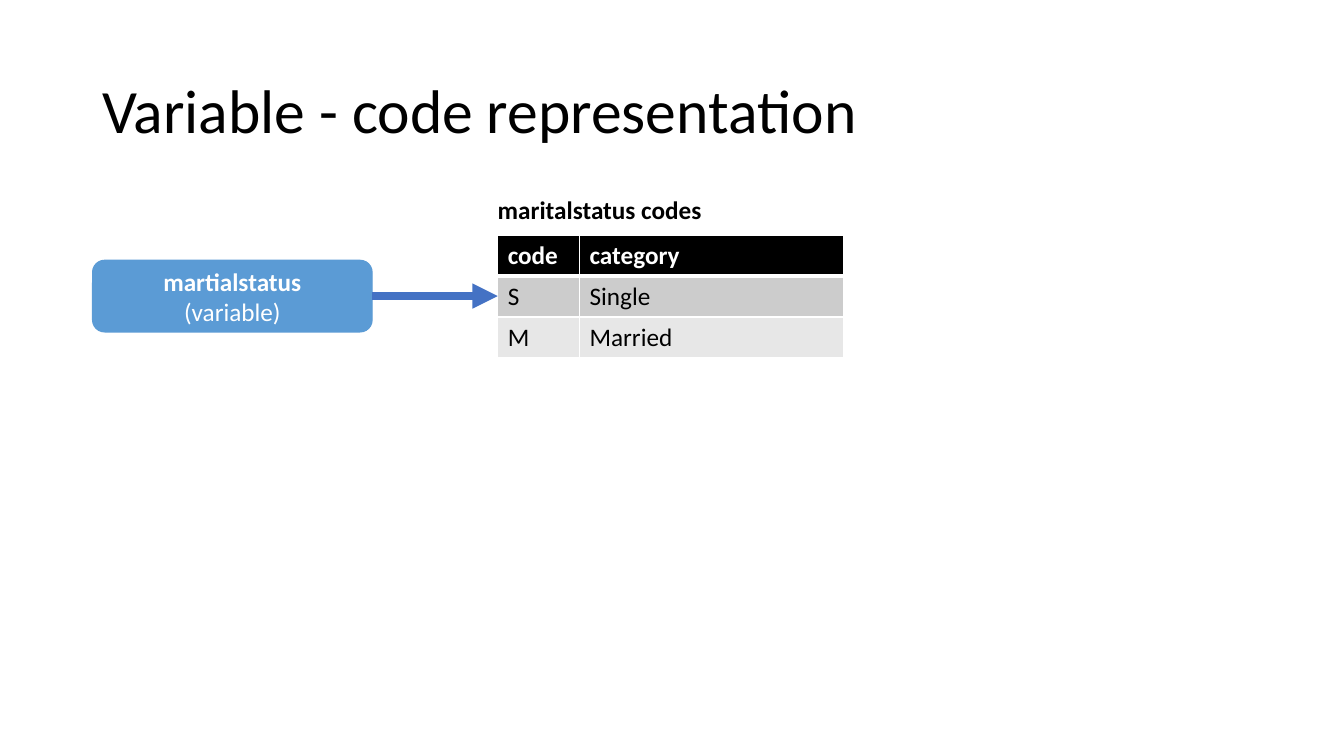
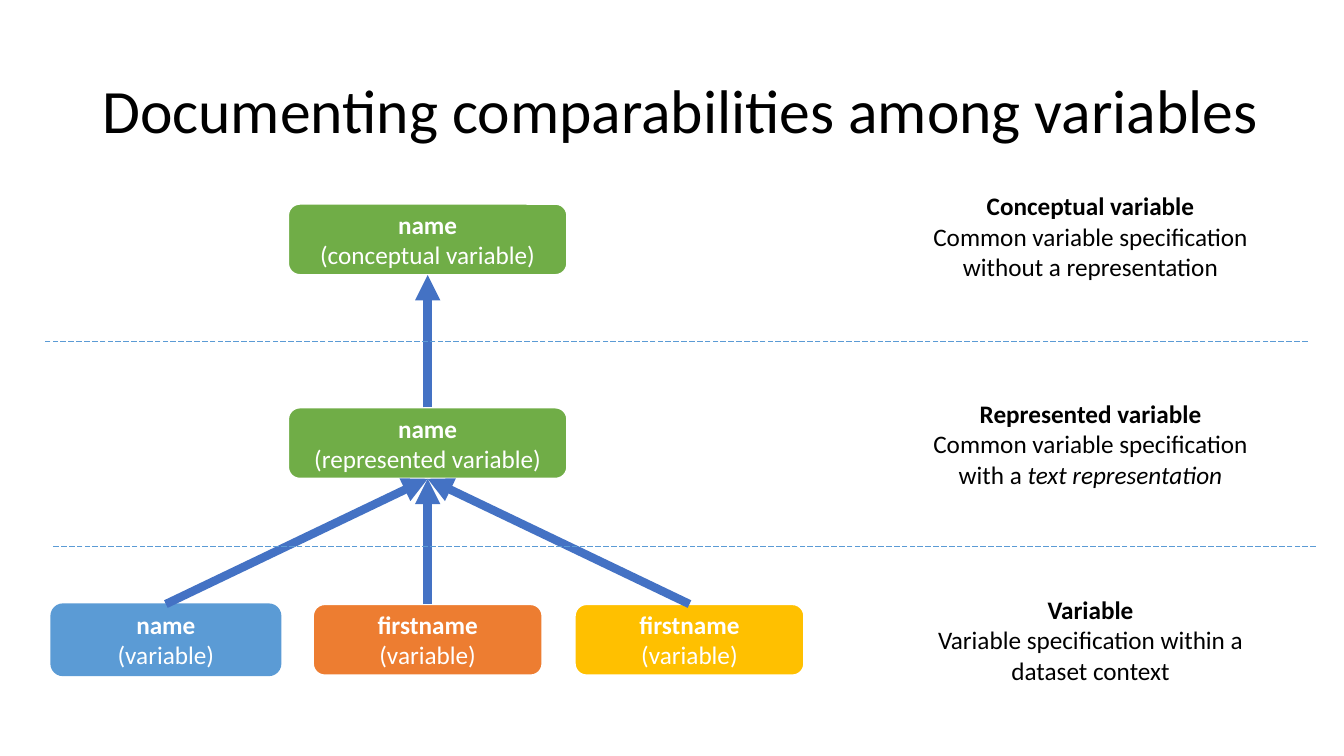
from dataclasses import dataclass

from lxml.etree import SubElement
from pptx import Presentation
from pptx.dml.color import RGBColor
from pptx.enum.dml import MSO_LINE_DASH_STYLE as Dash
from pptx.enum.shapes import MSO_CONNECTOR as Connector, MSO_SHAPE as Shape
from pptx.enum.text import MSO_ANCHOR as Anchor, PP_ALIGN as Align
from pptx.oxml.ns import qn
from pptx.util import Pt


@dataclass(frozen=True)
class Theme:
    font: str = "Calibri"
    title_size: float = 44
    body_size: float = 18
    black: str = "000000"
    white: str = "FFFFFF"
    blue: str = "5B9BD5"
    green: str = "70AD47"
    orange: str = "ED7D31"
    yellow: str = "FFC000"
    arrow: str = "4472C4"
    row_fills: tuple = ("000000", "CCCCCC", "E7E7E7")


THEME = Theme()


@dataclass(frozen=True)
class Span:
    text: str
    bold: bool = False
    italic: bool = False


@dataclass(frozen=True)
class Node:
    name: str
    kind: str
    center: float
    top: float
    width: float
    fill: str
    line: str = THEME.white
    line_width: float = 1.5


@dataclass(frozen=True)
class Note:
    top: float
    lines: list


NODE_HEIGHT = 51
TOP, LEFT, BOTTOM, RIGHT = 0, 1, 2, 3


# Shared helpers
def color(code: str) -> RGBColor:
    return RGBColor.from_string(code)


def set_values(target, values: dict) -> None:
    for name, value in values.items():
        setattr(target, name, value)


def write(frame, lines: list, ink: str = THEME.black,
          size: float = THEME.body_size, para_format: dict | None = None) -> None:
    for index, spans in enumerate(lines):
        para = frame.paragraphs[0] if index == 0 else frame.add_paragraph()
        set_values(para, para_format or {})
        for span in spans:
            run = para.add_run()
            run.text = span.text
            set_values(run.font, {"name": THEME.font, "size": Pt(size),
                                  "bold": span.bold, "italic": span.italic})
            run.font.color.rgb = color(ink)


def add_text(page, left: float, top: float, width: float, height: float,
             lines: list, **style) -> None:
    box = page.shapes.add_textbox(Pt(left), Pt(top), Pt(width), Pt(height))
    set_values(box.text_frame, {"word_wrap": True, "vertical_anchor": Anchor.MIDDLE})
    write(box.text_frame, lines, **style)


def add_page(deck, title: str, title_width: float = 828):
    page = deck.slides.add_slide(deck.slide_layouts[6])
    add_text(page, 66, 29, title_width, 104, [[Span(title)]],
             size=THEME.title_size, para_format={"line_spacing": 0.9})
    return page


def add_node(page, node: Node):
    box = page.shapes.add_shape(
        Shape.ROUNDED_RECTANGLE, Pt(node.center - node.width / 2), Pt(node.top),
        Pt(node.width), Pt(NODE_HEIGHT))
    box.shadow.inherit = False
    box.fill.solid()
    box.fill.fore_color.rgb = color(node.fill)
    box.line.color.rgb = color(node.line)
    box.line.width = Pt(node.line_width)
    set_values(box.text_frame, {"word_wrap": True, "vertical_anchor": Anchor.MIDDLE})
    write(box.text_frame, [[Span(node.name, bold=True)], [Span(node.kind)]],
          THEME.white, para_format={"alignment": Align.CENTER})
    return box


def add_line(page, start: tuple, end: tuple, ink: str, width: float):
    line = page.shapes.add_connector(Connector.STRAIGHT, *map(Pt, start + end))
    line.line.color.rgb = color(ink)
    line.line.width = Pt(width)
    SubElement(line._element.spPr, qn("a:effectLst"))
    return line


def add_arrow(page, start: tuple = (0, 0), end: tuple = (0, 0)):
    arrow = add_line(page, start, end, THEME.arrow, 6)
    SubElement(arrow.line._get_or_add_ln(), qn("a:tailEnd"), type="triangle")
    return arrow


def join(page, lower, upper) -> None:
    arrow = add_arrow(page)
    arrow.begin_connect(lower, TOP)
    arrow.end_connect(upper, BOTTOM)


def border_cell(cell, widths: dict) -> None:
    properties = cell._tc.get_or_add_tcPr()
    for side in "LRTB":
        edge = SubElement(properties, qn(f"a:ln{side}"), w=str(Pt(widths.get(side, 1))))
        fill = SubElement(edge, qn("a:solidFill"))
        SubElement(fill, qn("a:srgbClr"), val=THEME.white)


def add_grid(page, left: float, top: float, columns: list, row_height: float, rows: list):
    grid = page.shapes.add_table(len(rows), len(columns), Pt(left), Pt(top),
                                 Pt(sum(columns)), Pt(row_height * len(rows))).table
    for column, width in zip(grid.columns, columns):
        column.width = Pt(width)
    for row_index, texts in enumerate(rows):
        grid.rows[row_index].height = Pt(row_height)
        header = row_index == 0
        for column_index, text in enumerate(texts):
            cell = grid.cell(row_index, column_index)
            border_cell(cell, {"B": 3} if header else {"T": 3} if row_index == 1 else {})
            cell.fill.solid()
            cell.fill.fore_color.rgb = color(THEME.row_fills[row_index])
            write(cell.text_frame, [[Span(text, bold=header)]],
                  THEME.white if header else THEME.black)
    return grid


# Slide 1: a variable and its code list
def build_codes(deck) -> None:
    page = add_page(deck, "Variable - code representation")
    grid_left = 355.5
    add_grid(page, grid_left, 168, [58.5, 188.5], 29.2,
             [["code", "category"], ["S", "Single"], ["M", "Married"]])

    # Caption above the code list
    caption = page.shapes.add_table(1, 1, Pt(grid_left), Pt(136), Pt(207.5), Pt(29.2)).table
    cell = caption.cell(0, 0)
    border_cell(cell, {"B": 3})
    cell.fill.background()
    cell.margin_left = 0
    write(cell.text_frame, [[Span("maritalstatus codes", bold=True)]])

    node = Node("martialstatus", "(variable)", 166, 186, 199.5, THEME.blue, THEME.blue, 1)
    box = add_node(page, node)
    middle = node.top + NODE_HEIGHT / 2
    arrow = add_arrow(page, (node.center + node.width / 2, middle), (grid_left, middle))
    arrow.begin_connect(box, RIGHT)


# Slide 2: three levels of variables
def build_levels(deck) -> None:
    page = add_page(deck, "Documenting comparabilities among variables", 853)
    center, step = 305.5, 187
    conceptual, represented = [
        add_node(page, Node("name", kind, center, top, 199.5, THEME.green))
        for kind, top in (("(conceptual variable)", 145.5), ("(represented variable)", 291))]
    variables = [
        add_node(page, Node(name, "(variable)", center + offset * step, 431.5, 164, *paint))
        for offset, name, paint in (
            (-1, "name", (THEME.blue, THEME.blue, 1)),
            (0, "firstname", (THEME.orange,)),
            (1, "firstname", (THEME.yellow,)))]

    # Arrows from each level to the one above
    join(page, represented, conceptual)
    for variable in variables:
        join(page, variable, represented)

    # Dashed lines between the levels
    for left, top in ((31, 243.5), (37, 390.5)):
        divider = add_line(page, (left + 903, top), (left, top), THEME.blue, 0.5)
        divider.line.dash_style = Dash.LONG_DASH

    # Explanation of each level
    notes = [
        Note(125, [[Span("Conceptual variable", bold=True)],
                   [Span("Common variable specification without a representation")]]),
        Note(273.5, [[Span("Represented variable", bold=True)],
                     [Span("Common variable specification with a "),
                      Span("text representation", italic=True)]]),
        Note(413.5, [[Span("Variable", bold=True)],
                     [Span("Variable specification within a dataset context")]]),
    ]
    for note in notes:
        add_text(page, 654.5, note.top, 249, 87, note.lines,
                 para_format={"alignment": Align.CENTER})


def main() -> None:
    deck = Presentation()
    set_values(deck, {"slide_width": Pt(960), "slide_height": Pt(540)})
    build_codes(deck)
    build_levels(deck)
    deck.save("out.pptx")


if __name__ == "__main__":
    main()
